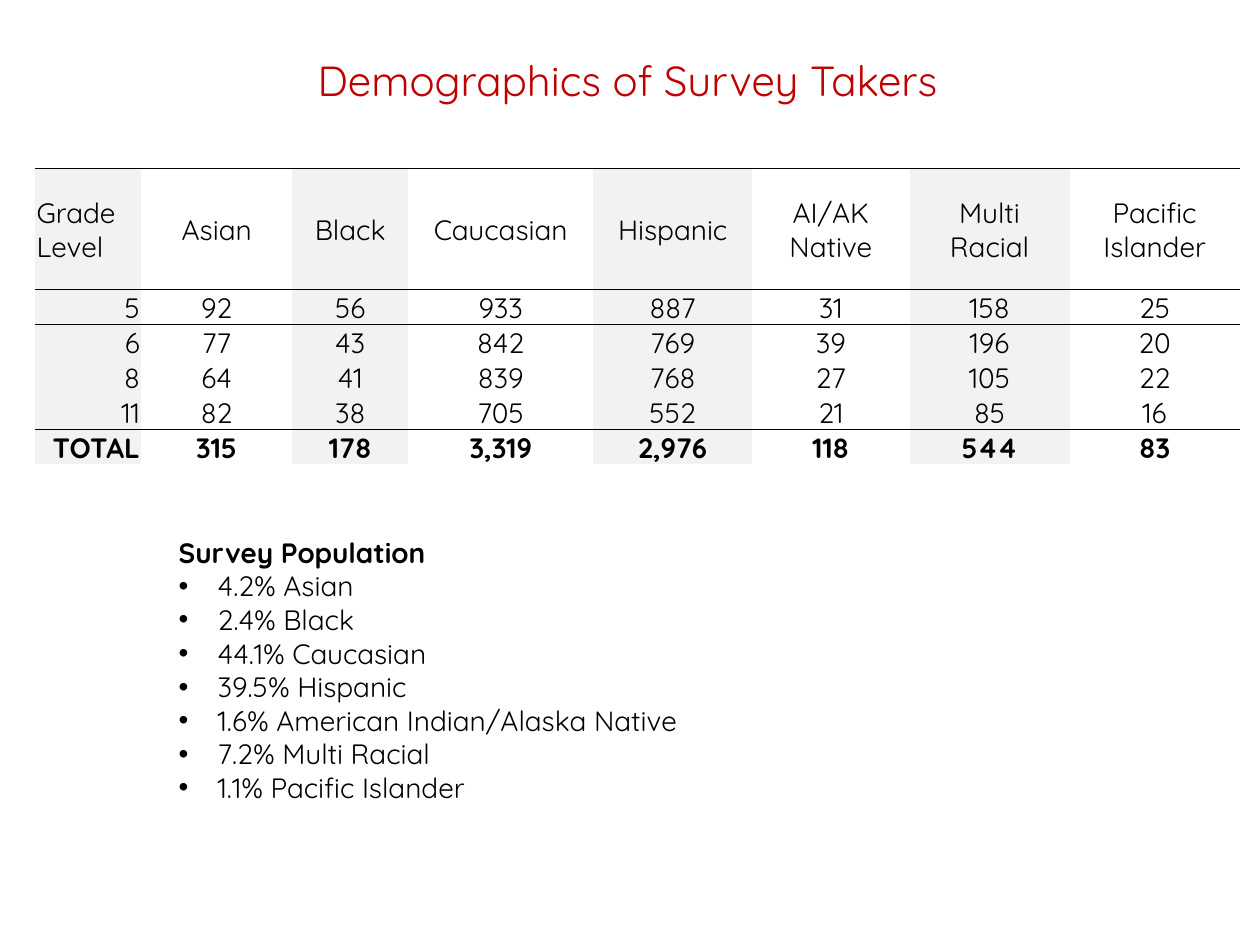
from lxml import etree
from pptx import Presentation
from pptx.dml.color import RGBColor
from pptx.enum.text import MSO_ANCHOR, MSO_AUTO_SIZE, PP_ALIGN
from pptx.oxml.ns import qn
from pptx.util import Inches, Pt

LEFT, CENTER, RIGHT = PP_ALIGN.LEFT, PP_ALIGN.CENTER, PP_ALIGN.RIGHT
TOP, MIDDLE, BOTTOM = MSO_ANCHOR.TOP, MSO_ANCHOR.MIDDLE, MSO_ANCHOR.BOTTOM
GROW = MSO_AUTO_SIZE.SHAPE_TO_FIT_TEXT

BLACK = RGBColor(0x00, 0x00, 0x00)
WHITE = RGBColor(0xFF, 0xFF, 0xFF)
GRAY = RGBColor(0xF2, 0xF2, 0xF2)
RED = RGBColor(0xC0, 0x00, 0x00)
FONT = "Quicksand"
PLAIN = "{2D5ABB26-0587-4C30-8999-92F81FD0307C}"

WIDTHS = [0.84, 1.2, 0.92, 1.47, 1.26, 1.25, 1.27, 1.35]
HEIGHTS = [0.96] + [0.25] * 5
ROWS = [
    ["Grade Level", "Asian", "Black", "Caucasian", "Hispanic",
     "AI/AK\nNative", "Multi\nRacial", "Pacific Islander"],
    ["5", "92", "56", "933", "887", "31", "158", "25"],
    ["6", "77", "43", "842", "769", "39", "196", "20"],
    ["8", "64", "41", "839", "768", "27", "105", "22"],
    ["11", "82", "38", "705", "552", "21", "85", "16"],
    ["TOTAL", "315", "178", "3,319", "2,976", "118", "544", "83"],
]
SHARES = [
    "4.2% Asian", "2.4% Black", "44.1% Caucasian", "39.5% Hispanic",
    "1.6% American Indian/Alaska Native", "7.2% Multi Racial",
    "1.1% Pacific Islander",
]


def write(para, text, size=16, color=BLACK, bold=False, align=LEFT, bullet=False):
    """Put formatted text in a paragraph."""
    para.alignment = align
    if bullet:
        props = para._p.get_or_add_pPr()
        props.set("marL", str(Inches(0.31)))
        props.set("indent", str(Inches(-0.31)))
        etree.SubElement(props, qn("a:buFont"), typeface="Arial")
        etree.SubElement(props, qn("a:buChar"), char="•")
    run = para.add_run()
    run.text = text
    font = run.font
    font.name, font.size, font.bold = FONT, Pt(size), bold
    font.color.rgb = color


def add_rule(cell, side):
    """Draw a thin black border on one side of a cell."""
    line = etree.SubElement(cell._tc.get_or_add_tcPr(), qn(f"a:{side}"),
                            w=str(Pt(0.5)))
    fill = etree.SubElement(line, qn("a:solidFill"))
    etree.SubElement(fill, qn("a:srgbClr"), val=str(BLACK))


class Deck:
    """Hold the presentation and its current slide."""

    def __init__(self):
        """Start a deck with one blank slide."""
        self.show = Presentation()
        self.show.slide_width = Inches(10)
        self.show.slide_height = Inches(7.5)
        self.slide = self.show.slides.add_slide(self.show.slide_layouts[6])

    def text(self, x, y, w, h, lines, anchor=TOP, grow=False):
        """Add a text box from pairs of text and format."""
        box = self.slide.shapes.add_textbox(*map(Inches, (x, y, w, h)))
        frame = box.text_frame
        frame.word_wrap = True
        frame.vertical_anchor = anchor
        if grow:
            frame.auto_size = GROW
        for i, (line, style) in enumerate(lines):
            para = frame.add_paragraph() if i else frame.paragraphs[0]
            write(para, line, **style)

    def table(self, x, y, rows, widths, heights):
        """Add a table with striped columns and thin rules."""
        size = map(Inches, (x, y, sum(widths), sum(heights)))
        table = self.slide.shapes.add_table(len(rows), len(widths), *size).table
        table.first_row = table.horz_banding = False
        table._tbl.tblPr.find(qn("a:tableStyleId")).text = PLAIN
        for col, width in zip(table.columns, widths):
            col.width = Inches(width)
        for row, height in zip(table.rows, heights):
            row.height = Inches(height)
        for r, row in enumerate(rows):
            for c, text in enumerate(row):
                self.cell(table.cell(r, c), text, r, c, len(rows) - 1)

    def cell(self, cell, text, r, c, last):
        """Fill and format one table cell."""
        total = r == last
        cell.margin_left = cell.margin_right = cell.margin_top = Inches(0.01)
        cell.margin_bottom = 0
        cell.vertical_anchor = BOTTOM if total and c else MIDDLE
        if r in (0, 1, last):
            add_rule(cell, "lnT")
        if r in (0, last - 1):
            add_rule(cell, "lnB")
        cell.fill.solid()
        cell.fill.fore_color.rgb = WHITE if c % 2 else GRAY
        align = CENTER if c else RIGHT if r else LEFT
        frame = cell.text_frame
        for i, line in enumerate(text.split("\n")):
            para = frame.add_paragraph() if i else frame.paragraphs[0]
            write(para, line, bold=total, align=align)


def main():
    """Build the survey slide."""
    deck = Deck()
    title = ("Demographics of Survey Takers", dict(size=24, color=RED, align=CENTER))
    deck.text(0.48, 0.01, 9, 1.25, [title], anchor=MIDDLE)
    lines = [("Survey Population", dict(bold=True))]
    lines += [(share, dict(bullet=True)) for share in SHARES]
    deck.text(1.32, 4.2, 8.34, 2.32, lines, grow=True)
    deck.table(0.28, 1.34, ROWS, WIDTHS, HEIGHTS)
    deck.show.save("out.pptx")


if __name__ == "__main__":
    main()
